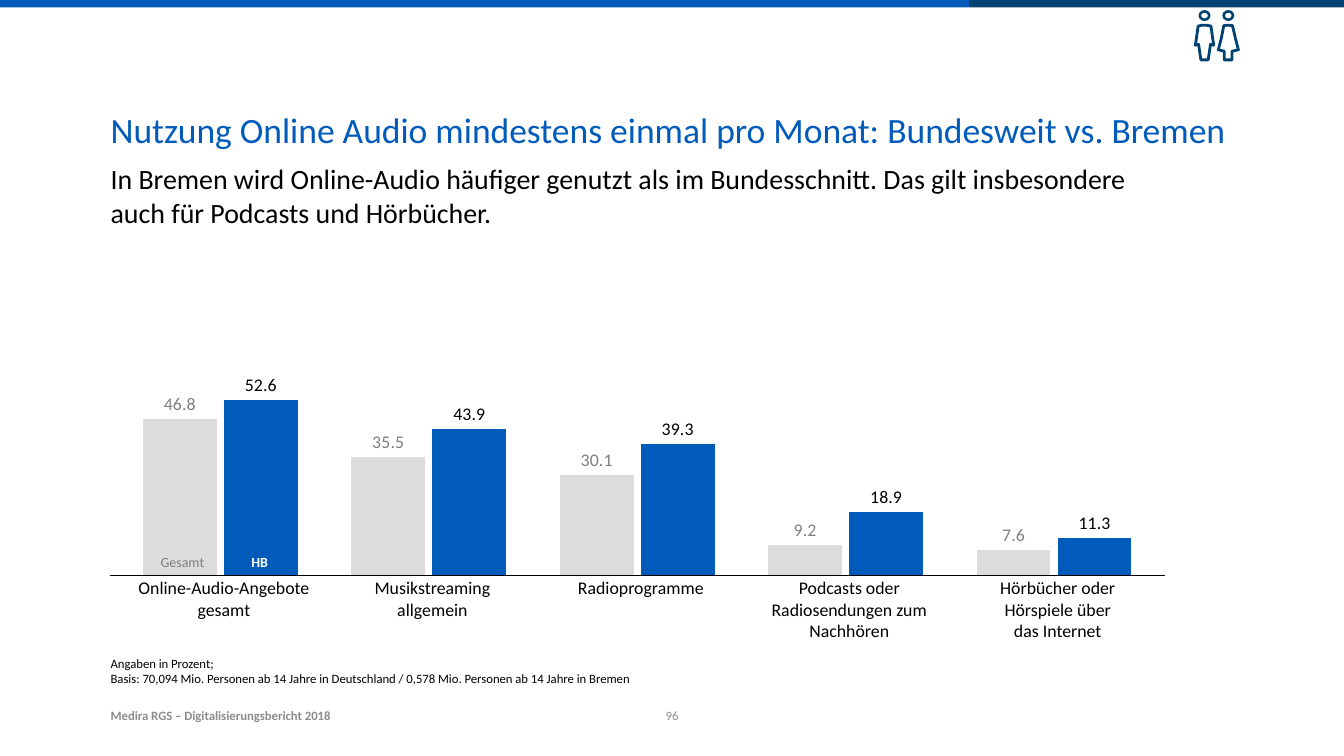
from lxml.etree import SubElement
from pptx import Presentation
from pptx.chart.data import CategoryChartData
from pptx.dml.color import RGBColor
from pptx.enum.chart import XL_CHART_TYPE, XL_LABEL_POSITION, XL_TICK_LABEL_POSITION, XL_TICK_MARK
from pptx.enum.shapes import MSO_CONNECTOR, MSO_SHAPE
from pptx.enum.text import MSO_ANCHOR, MSO_AUTO_SIZE, PP_ALIGN
from pptx.oxml import parse_xml
from pptx.oxml.ns import nsdecls, qn
from pptx.util import Pt

PX = 9144  # 100 px per inch
FONT = "Calibri"
COLORS = {"blue": "005BBB", "navy": "004372", "light": "DCDCDC", "gray": "7F7F7F",
          "footer": "8C8C8C", "black": "000000", "white": "FFFFFF"}
NO_GRID_STYLE = "{2D5ABB26-0587-4C30-8999-92F81FD0307C}"

LABELS = [
    ["Online-Audio-Angebote gesamt"],
    ["Musikstreaming", "allgemein"],
    ["Radioprogramme"],
    ["Podcasts oder Radiosendungen zum Nachhören"],
    ["Hörbücher oder", "Hörspiele über", "das Internet"],
]
SERIES = [
    ("Series 1", (46.8, 35.5, 30.1, 9.2, 7.6), "light", "gray"),
    ("Series 2", (52.6, 43.9, 39.3, 18.9, 11.3), "blue", "black"),
]
# Outlines in thousandths of an inch
MAN = [(13105, 285), (13140, 277), (13170, 275), (13205, 277), (13245, 285), (13275, 495),
       (13240, 485), (13215, 655), (13135, 655), (13110, 485), (13075, 495)]
WOMAN = [(13385, 280), (13430, 275), (13480, 280), (13510, 410), (13545, 545), (13475, 560),
         (13475, 655), (13390, 655), (13390, 560), (13325, 545), (13360, 410)]


def px(*lengths):
    return [length * PX for length in lengths]


def rgb(name):
    return RGBColor.from_string(COLORS[name])


def style_font(font, size, color, bold=False):
    font.name, font.size, font.bold = FONT, Pt(size), bold
    font.color.rgb = rgb(color)


def set_insets(holder, anchor, left=0, top=0, right=0, bottom=0):
    """Works for a text frame and for a table cell."""
    holder.margin_left, holder.margin_top, holder.margin_right, holder.margin_bottom = px(
        left, top, right, bottom)
    holder.vertical_anchor = anchor


def write(frame, paragraphs, size, color, bold=False, align=PP_ALIGN.LEFT, spacing=None):
    """Each paragraph is a string; a newline in it becomes a line break."""
    for number, text in enumerate(paragraphs):
        paragraph = frame.paragraphs[0] if number == 0 else frame.add_paragraph()
        paragraph.alignment = align
        paragraph.line_spacing = spacing
        for position, line in enumerate(text.split("\n")):
            if position:
                paragraph.add_line_break()
            run = paragraph.add_run()
            run.text = line
            style_font(run.font, size, color, bold)


def fill_placeholder(holder, box, text, size, color):
    holder.left, holder.top, holder.width, holder.height = px(*box)
    frame = holder.text_frame
    frame.word_wrap, frame.auto_size = True, MSO_AUTO_SIZE.NONE
    set_insets(frame, MSO_ANCHOR.TOP)
    properties = frame.paragraphs[0]._p.get_or_add_pPr()
    properties.set("marL", "0")
    properties.set("indent", "0")
    SubElement(properties, qn("a:buNone"))
    frame.paragraphs[0].space_before = Pt(0)
    write(frame, [text], size, color)


def add_label(slide, box, text, color, **style):
    frame = slide.shapes.add_textbox(*px(*box)).text_frame
    frame.word_wrap = True
    set_insets(frame, MSO_ANCHOR.BOTTOM)
    write(frame, [text], 10, color, **style)


def add_filled(slide, preset, box, color):
    shape = slide.shapes.add_shape(preset, *px(*box))
    shape.shadow.inherit = False
    shape.fill.solid()
    shape.fill.fore_color.rgb = rgb(color)
    shape.line.fill.background()
    return shape


def add_person(slide, head_left, outline):
    head = add_filled(slide, MSO_SHAPE.DONUT, (head_left, 11, 13, 12), "navy")
    head.adjustments[0] = 0.24
    builder = slide.shapes.build_freeform(*outline[0], scale=PX / 10)
    builder.add_line_segments(outline[1:], close=True)
    body = builder.convert_to_shape()
    body.shadow.inherit = False
    body.fill.background()
    body.line.color.rgb = rgb("navy")
    body.line.width = Pt(2.2)


def add_baseline(slide, left, right, y):
    line = slide.shapes.add_connector(MSO_CONNECTOR.STRAIGHT, *px(left, y, right, y))
    line.line.color.rgb = rgb("black")
    line.line.width = Pt(0.25)
    SubElement(line._element.spPr, qn("a:effectLst"))


def add_plain_row(slide, box, widths):
    """Adds a one-row table without grid or fill and returns its cells."""
    table = slide.shapes.add_table(1, len(widths), *px(*box)).table
    table.first_row = table.horz_banding = False
    table._tbl.tblPr.find(qn("a:tableStyleId")).text = NO_GRID_STYLE
    for column, width in zip(table.columns, widths):
        column.width = width * PX
    cells = list(table.rows[0].cells)
    for cell in cells:
        cell.fill.background()
    return cells


def add_usage_chart(slide, box):
    data = CategoryChartData(number_format="0.0")
    data.categories = [str(number) for number in range(1, len(LABELS) + 1)]
    for name, values, _, _ in SERIES:
        data.add_series(name, values)
    chart = slide.shapes.add_chart(XL_CHART_TYPE.COLUMN_CLUSTERED, *px(*box), data).chart
    chart.has_legend = chart.has_title = False
    style_font(chart.font, 10, "black")

    categories, values = chart.category_axis, chart.value_axis
    categories.tick_label_position = XL_TICK_LABEL_POSITION.NONE
    categories.major_tick_mark = categories.minor_tick_mark = XL_TICK_MARK.NONE
    categories.format.line.fill.background()
    values.minimum_scale, values.maximum_scale = 0, 90
    values.has_major_gridlines = values.visible = False

    plot = chart.plots[0]
    plot.gap_width, plot.overlap, plot.vary_by_categories = 73, -10, False
    for series, (_, _, fill, label_color) in zip(plot.series, SERIES):
        series.format.fill.solid()
        series.format.fill.fore_color.rgb = rgb(fill)
        labels = series.data_labels
        labels.show_value = True
        labels.position = XL_LABEL_POSITION.OUTSIDE_END
        labels.number_format, labels.number_format_is_linked = "0.0", False
        style_font(labels.font, 14, label_color)

    area = chart._chartSpace.chart.plotArea
    for old_layout in area.findall(qn("c:layout")):
        area.remove(old_layout)
    sizes = "".join(f'<c:{tag} val="{value}"/>' for tag, value in
                    (("x", 0.005), ("y", 0.056), ("w", 0.939), ("h", 0.793)))
    area.insert(0, parse_xml(
        f'<c:layout {nsdecls("c")}><c:manualLayout><c:layoutTarget val="inner"/>'
        f'<c:xMode val="edge"/><c:yMode val="edge"/>{sizes}</c:manualLayout></c:layout>'))


def main():
    deck = Presentation()
    deck.slide_width, deck.slide_height = px(1470, 827)
    slide = deck.slides.add_slide(deck.slide_layouts[1])

    add_filled(slide, MSO_SHAPE.RECTANGLE, (0, 0, 1060, 8), "blue")
    add_filled(slide, MSO_SHAPE.RECTANGLE, (1060, 0, 410, 8), "navy")
    add_usage_chart(slide, (121, 278, 1214, 414))

    fill_placeholder(slide.shapes.title, (121, 118, 1228, 59),
                     "Nutzung Online Audio mindestens einmal pro Monat: Bundesweit vs. Bremen",
                     28, "blue")
    fill_placeholder(slide.placeholders[1], (121, 177, 1145, 79),
                     "In Bremen wird Online-Audio häufiger genutzt als im Bundesschnitt. "
                     "Das gilt insbesondere auch für Podcasts und Hörbücher.", 22, "black")

    add_person(slide, 1311, MAN)
    add_person(slide, 1337, WOMAN)
    add_baseline(slide, 120, 1274, 629)

    for cell, label in zip(add_plain_row(slide, (131, 631, 1140, 71), [228] * 5), LABELS):
        set_insets(cell, MSO_ANCHOR.TOP, left=1, top=1, right=1)
        write(cell.text_frame, label, 14, "black", align=PP_ALIGN.CENTER)

    legend = (("Gesamt", "gray", False), ("HB", "white", True))
    for cell, (name, color, bold) in zip(add_plain_row(slide, (157, 567, 169, 58), (85, 84)), legend):
        set_insets(cell, MSO_ANCHOR.BOTTOM)
        write(cell.text_frame, [name], 11, color, bold, PP_ALIGN.CENTER, Pt(10))

    add_label(slide, (121, 720, 1095, 31),
              "Angaben in Prozent;\nBasis: 70,094 Mio. Personen ab 14 Jahre in Deutschland / "
              "0,578 Mio. Personen ab 14 Jahre in Bremen", "black")
    add_label(slide, (121, 768, 418, 23), "Medira RGS – Digitalisierungsbericht 2018", "footer", bold=True)
    add_label(slide, (719, 766, 32, 25), "96", "footer", align=PP_ALIGN.CENTER)

    deck.save("out.pptx")


if __name__ == "__main__":
    main()
